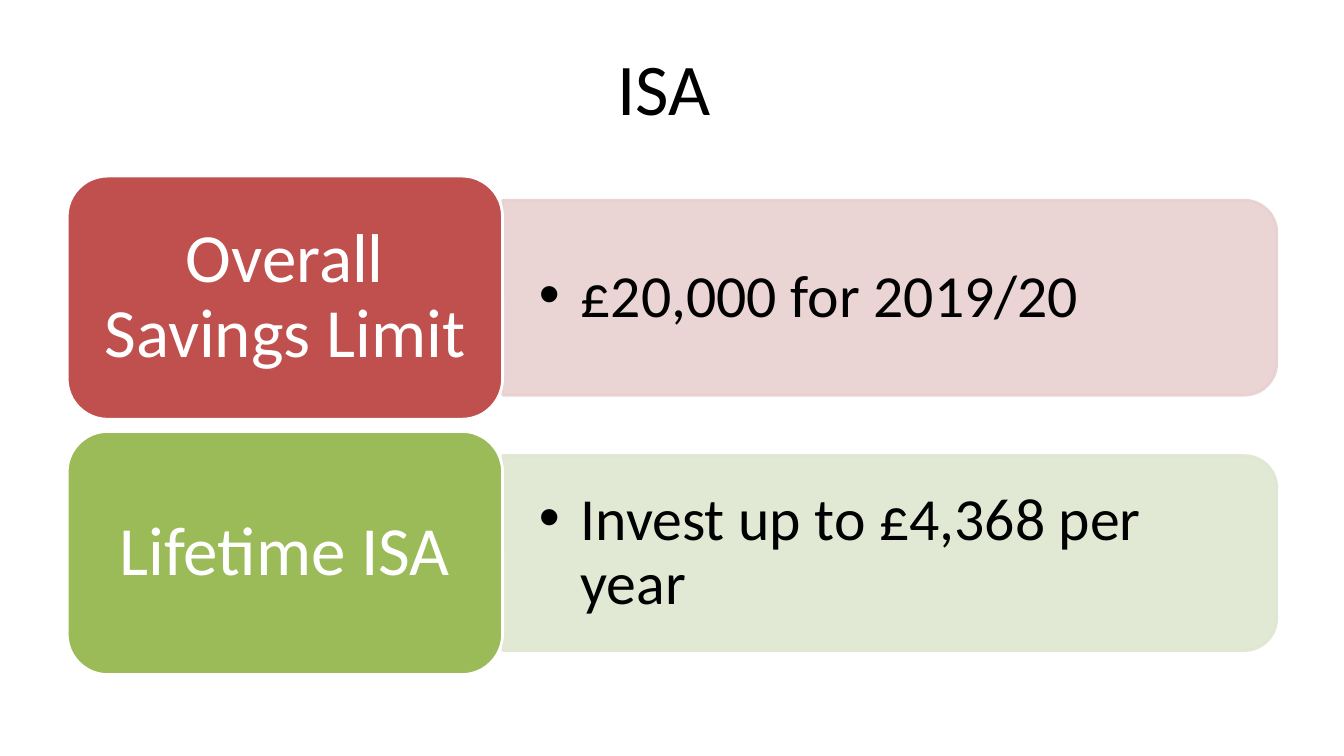
from dataclasses import dataclass

from pptx import Presentation
from pptx.dml.color import RGBColor
from pptx.enum.shapes import MSO_SHAPE as Preset
from pptx.enum.text import MSO_ANCHOR as Anchor, PP_ALIGN as Align
from pptx.oxml.ns import qn
from pptx.util import Pt
from lxml.etree import SubElement

EMU_PER_PX = 9144  # 100 px to the inch


def px(length):
    return round(length * EMU_PER_PX)


@dataclass(frozen=True)
class Theme:
    font: str = "Calibri"
    ink: str = "000000"
    paper: str = "FFFFFF"
    red: str = "C0504D"
    pale_red: str = "E8D0D0"
    green: str = "9BBB59"
    pale_green: str = "DEE7D1"
    title_size: int = 39
    label_size: int = 37
    detail_size: int = 32
    outline: float = 1.5
    panel_alpha: int = 90


class SlideBuilder:
    def __init__(self, slide, theme):
        self.slide = slide
        self.theme = theme

    def block(self, preset, box, fill, outline, alpha=100):
        """Add a preset shape; alpha is the opacity of fill and line in percent."""
        shape = self.slide.shapes.add_shape(preset, *map(px, box))
        shape.shadow.inherit = False
        shape.line.width = Pt(self.theme.outline)
        for paint, color in ((shape.fill, fill), (shape.line.fill, outline)):
            paint.solid()
            paint.fore_color.rgb = RGBColor.from_string(color)
        if alpha < 100:
            for color in shape._element.spPr.iter(qn("a:srgbClr")):
                SubElement(color, qn("a:alpha"), val=str(alpha * 1000))
        return shape

    def panel(self, box, color):
        """Add a panel rounded on its right side, made by a quarter turn."""
        left, top, width, height = box
        shift = (width - height) / 2
        turned = (left + shift, top - shift, height, width)
        shape = self.block(Preset.ROUND_2_SAME_RECTANGLE, turned, color, color,
                           self.theme.panel_alpha)
        shape.rotation = 90

    def text(self, box, words, size, color, insets, spacing=0.9, align=Align.CENTER):
        frame = self.slide.shapes.add_textbox(*map(px, box)).text_frame
        frame.word_wrap = True
        frame.vertical_anchor = Anchor.MIDDLE
        frame.margin_left = frame.margin_right = px(insets[0])
        frame.margin_top = frame.margin_bottom = px(insets[1])
        paragraph = frame.paragraphs[0]
        paragraph.alignment = align
        paragraph.line_spacing = spacing
        run = paragraph.add_run()
        run.text = words
        run.font.name = self.theme.font
        run.font.size = Pt(size)
        run.font.color.rgb = RGBColor.from_string(color)
        return paragraph

    def bullet(self, box, words, size, color, insets, indent=31):
        paragraph = self.text(box, words, size, color, insets, align=Align.LEFT)
        properties = paragraph._p.get_or_add_pPr()
        properties.set("marL", str(px(indent)))
        properties.set("indent", str(-px(indent)))
        SubElement(properties, qn("a:buFont"), typeface="Arial")
        SubElement(properties, qn("a:buChar"), char="•")


def main():
    theme = Theme()
    deck = Presentation()
    deck.slide_width, deck.slide_height = px(1000), px(562.5)
    builder = SlideBuilder(deck.slides.add_slide(deck.slide_layouts[6]), theme)

    builder.text((50, 23, 900, 94), "ISA ", theme.title_size, theme.ink,
                 insets=(10, 5), spacing=0.8)

    left, first_top, pitch = 50, 131, 190
    label_width, label_height, label_pad = 324, 181, 9
    panel_left, panel_width, panel_height = left + label_width, 576, 145
    detail_width, detail_height = 569, 131

    allowances = [
        ("Overall Savings Limit", "£20,000 for 2019/20", theme.red, theme.pale_red),
        ("Lifetime ISA", "Invest up to £4,368 per year", theme.green, theme.pale_green),
    ]
    for row, (label, detail, strong, pale) in enumerate(allowances):
        top = first_top + row * pitch
        middle = top + label_height / 2
        builder.panel((panel_left, middle - panel_height / 2,
                       panel_width, panel_height), pale)
        builder.bullet((panel_left, middle - detail_height / 2,
                        detail_width, detail_height),
                       detail, theme.detail_size, theme.ink, insets=(27, 14))
        builder.block(Preset.ROUNDED_RECTANGLE,
                      (left, top, label_width, label_height), strong, theme.paper)
        builder.text((left + label_pad, top + label_pad,
                      label_width - 2 * label_pad, label_height - 2 * label_pad),
                     label, theme.label_size, theme.paper, insets=(15, 8))

    deck.save("out.pptx")


if __name__ == "__main__":
    main()
